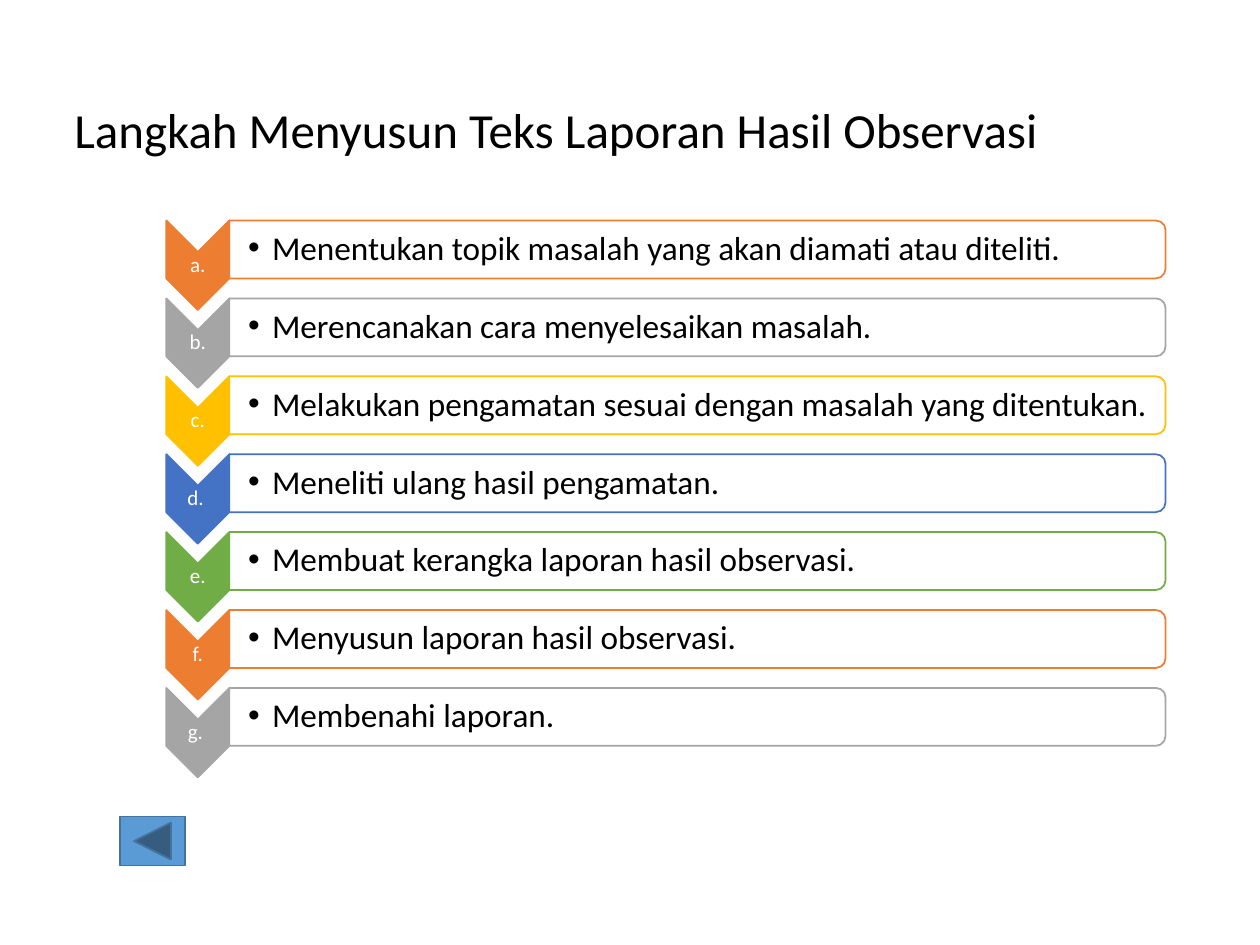
from dataclasses import dataclass

from lxml.etree import SubElement
from pptx import Presentation
from pptx.dml.color import RGBColor
from pptx.enum.shapes import MSO_SHAPE as Preset
from pptx.enum.text import MSO_ANCHOR as Anchor, PP_ALIGN as Align
from pptx.oxml.ns import qn
from pptx.util import Inches, Pt


@dataclass(frozen=True)
class Theme:
    font: str = "Calibri"
    text: str = "000000"
    paper: str = "FFFFFF"
    button: str = "5B9BD5"
    button_line: str = "43739E"
    accents: tuple = ("ED7D31", "A5A5A5", "FFC000", "4472C4", "70AD47")
    title_size: int = 28
    step_size: int = 19
    letter_size: int = 12


THEME = Theme()
TITLE = "Langkah Menyusun Teks Laporan Hasil Observasi"
STEPS = (
    ("a.", "Menentukan topik masalah yang akan diamati atau diteliti."),
    ("b.", "Merencanakan cara menyelesaikan masalah."),
    ("c.", "Melakukan pengamatan sesuai dengan masalah yang ditentukan."),
    ("d. ", "Meneliti ulang hasil pengamatan."),
    ("e.", "Membuat kerangka laporan hasil observasi."),
    ("f.", "Menyusun laporan hasil observasi."),
    ("g. ", "Membenahi laporan."),
)
FIRST_TOP, STEP_PITCH = 1.75, 3.71 / 6


def write(paragraph, words, size, color):
    paragraph.line_spacing = 0.9
    run = paragraph.add_run()
    run.text = words
    run.font.name = THEME.font
    run.font.size = Pt(size)
    run.font.color.rgb = RGBColor.from_string(color)


def add_preset(shapes, preset, box, fill, line):
    shape = shapes.add_shape(preset, *map(Inches, box))
    shape.shadow.inherit = False
    shape.fill.solid()
    shape.fill.fore_color.rgb = RGBColor.from_string(fill)
    shape.line.color.rgb = RGBColor.from_string(line)
    shape.line.width = Pt(1)
    return shape


def add_turned(shapes, preset, box, fill, line):
    """Add a shape turned by 90 degrees so that it covers box as seen."""
    left, top, width, height = box
    shift = (width - height) / 2
    unturned = (left + shift, top - shift, height, width)
    shape = add_preset(shapes, preset, unturned, fill, line)
    shape.rotation = 90
    return shape


def add_label(shapes, box, left_inset=0.01):
    """Add a vertically centred text box and return its paragraph."""
    frame = shapes.add_textbox(*map(Inches, box)).text_frame
    frame.word_wrap = True
    frame.vertical_anchor = Anchor.MIDDLE
    frame.margin_left = Inches(left_inset)
    frame.margin_top = frame.margin_right = frame.margin_bottom = Inches(0.01)
    return frame.paragraphs[0]


def add_bullet(paragraph, indent):
    properties = paragraph._p.get_or_add_pPr()
    properties.set("marL", str(Inches(indent)))
    properties.set("indent", str(-Inches(indent)))
    SubElement(properties, qn("a:buFont"), typeface="Arial")
    SubElement(properties, qn("a:buChar"), char="•")


def add_step(shapes, top, letter, step, accent):
    add_turned(shapes, Preset.CHEVRON, (1.32, top, 0.5, 0.71), accent, accent)
    mark = add_label(shapes, (1.32, top + 0.25, 0.5, 0.21))
    mark.alignment = Align.CENTER
    write(mark, letter, THEME.letter_size, THEME.paper)

    add_turned(shapes, Preset.ROUND_2_SAME_RECTANGLE,
               (1.82, top, 7.43, 0.46), THEME.paper, accent)
    sentence = add_label(shapes, (1.82, top + 0.02, 7.4, 0.42), 0.15)
    add_bullet(sentence, 0.19)
    write(sentence, step, THEME.step_size, THEME.text)


def add_title(slide):
    title = slide.shapes.title
    title.left, title.top = Inches(0.5), Inches(0.71)
    title.width, title.height = Inches(9), Inches(0.68)
    frame = title.text_frame
    frame.vertical_anchor = Anchor.MIDDLE
    frame.margin_left = frame.margin_right = Inches(0.09)
    frame.margin_top = frame.margin_bottom = Inches(0.04)
    heading = frame.paragraphs[0]
    heading.alignment = Align.LEFT
    write(heading, TITLE, THEME.title_size, THEME.text)


def main():
    deck = Presentation()
    deck.slide_width, deck.slide_height = Inches(10), Inches(7.5)
    slide = deck.slides.add_slide(deck.slide_layouts[5])
    add_title(slide)

    step_list = slide.shapes.add_group_shape().shapes
    for index, (letter, step) in enumerate(STEPS):
        accent = THEME.accents[index % len(THEME.accents)]
        add_step(step_list, FIRST_TOP + index * STEP_PITCH, letter, step, accent)

    add_preset(slide.shapes, Preset.ACTION_BUTTON_BACK_OR_PREVIOUS,
               (0.95, 6.48, 0.52, 0.39), THEME.button, THEME.button_line)
    deck.save("out.pptx")


if __name__ == "__main__":
    main()
